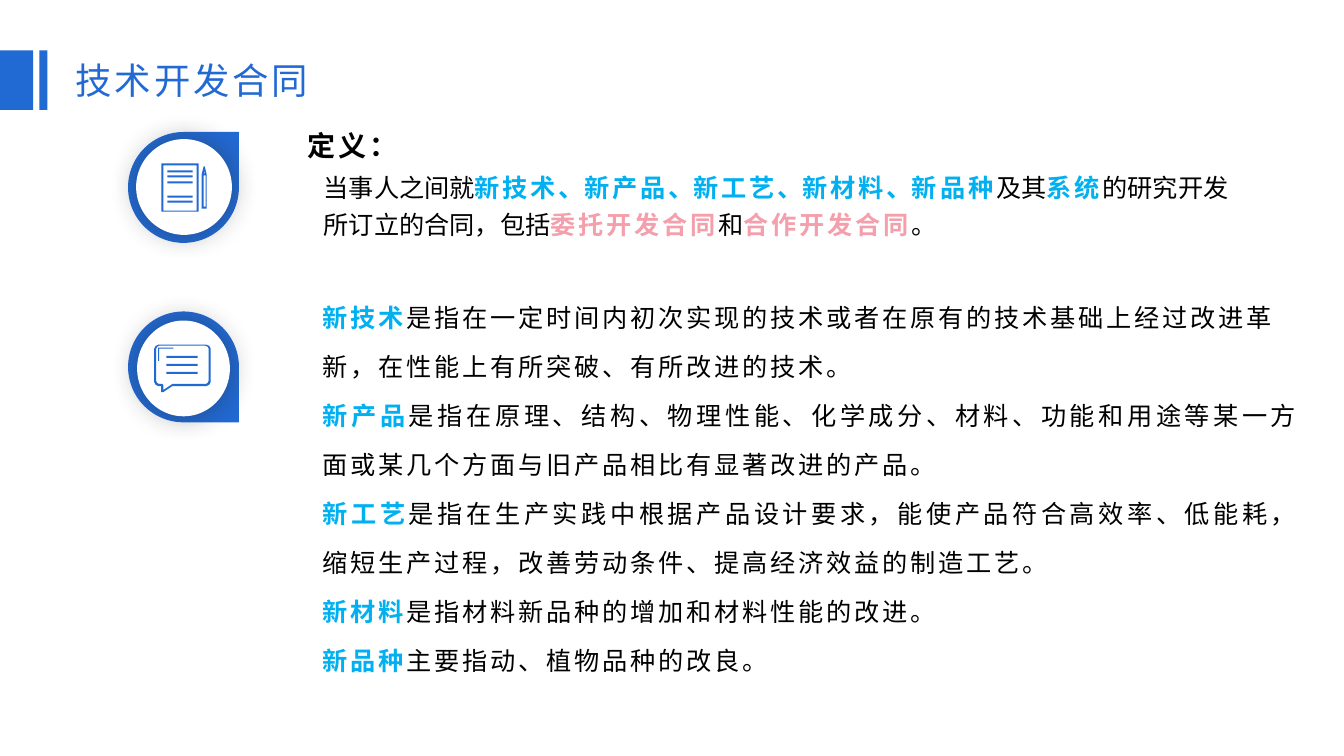
from lxml import etree
from pptx import Presentation
from pptx.dml.color import RGBColor
from pptx.enum.shapes import MSO_SHAPE
from pptx.enum.text import MSO_ANCHOR, PP_ALIGN
from pptx.oxml.ns import qn
from pptx.util import Inches, Pt

RECT, OVAL, TEAR = MSO_SHAPE.RECTANGLE, MSO_SHAPE.OVAL, MSO_SHAPE.TEAR
CENTER, JUSTIFY = PP_ALIGN.CENTER, PP_ALIGN.JUSTIFY
TOP, MIDDLE = MSO_ANCHOR.TOP, MSO_ANCHOR.MIDDLE
BLUE, CYAN, PINK, BLACK, WHITE = "2169D3", "00B0F0", "F49FAC", "000000", "FFFFFF"
SANS, TITLE = "Noto Sans CJK SC", "Noto Sans CJK JP"

TERMS = [
    ("新技术", "是指在一定时间内初次实现的技术或者在原有的技术基础上经过改进革新，在性能上有所突破、有所改进的技术。"),
    ("新产品", "是指在原理、结构、物理性能、化学成分、材料、功能和用途等某一方面或某几个方面与旧产品相比有显著改进的产品。"),
    ("新工艺", "是指在生产实践中根据产品设计要求，能使产品符合高效率、低能耗，缩短生产过程，改善劳动条件、提高经济效益的制造工艺。"),
    ("新材料", "是指材料新品种的增加和材料性能的改进。"),
    ("新品种", "主要指动、植物品种的改良。"),
]


def color(code):
    return RGBColor.from_string(code)


def paint(shape, code):
    shape.shadow.inherit = False
    shape.fill.solid()
    shape.fill.fore_color.rgb = color(code)
    shape.line.fill.background()
    return shape


def add_form(slide, kind, box, code):
    return paint(slide.shapes.add_shape(kind, *map(Inches, box)), code)


def add_glow(shape):
    """Give the shape a soft dark shadow on all sides."""
    effects = shape._element.spPr.find(qn("a:effectLst"))
    glow = etree.SubElement(effects, qn("a:outerShdw"), blurRad=str(Pt(20)),
                            dist="0", dir="0", algn="ctr", rotWithShape="0")
    tint = etree.SubElement(glow, qn("a:srgbClr"), val="262626")
    etree.SubElement(tint, qn("a:alpha"), val="40000")


def add_badge(slide, top, disc, turn):
    """Draw a blue drop with a white disc on it."""
    drop = add_form(slide, TEAR, (1.27, top, 1.1, 1.1), BLUE)
    drop.rotation = turn
    add_glow(add_form(slide, OVAL, disc, WHITE))


def add_icon(slide, loops):
    """Fill closed loops as one outline; a loop inside another is a hole."""
    first, *rest = loops
    pen = slide.shapes.build_freeform(*map(Inches, first[0]), scale=1.0)
    pen.add_line_segments([tuple(map(Inches, spot)) for spot in first[1:]])
    for loop in rest:
        pen.move_to(*map(Inches, loop[0]))
        pen.add_line_segments([tuple(map(Inches, spot)) for spot in loop[1:]])
    paint(pen.convert_to_shape(), BLUE)


def block(left, top, right, low):
    return [(left, top), (right, top), (right, low), (left, low), (left, top)]


def bars(left, right, tops):
    return [block(left, top, right, top + 0.02) for top in tops]


def bubble(left, top, right, low, cut, tail):
    """Speech bubble with cut corners; tail holds its three points."""
    return [(left + cut, top), (right - cut, top), (right - cut / 3, top + cut / 3),
            (right, top + cut), (right, low - cut), (right - cut / 3, low - cut / 3),
            (right - cut, low), *tail, (left + cut, low),
            (left + cut / 3, low - cut / 3), (left, low - cut), (left, top + cut),
            (left + cut / 3, top + cut / 3), (left + cut, top)]


def add_box(slide, box, anchor=TOP):
    frame = slide.shapes.add_textbox(*map(Inches, box)).text_frame
    look = {"word_wrap": True, "vertical_anchor": anchor,
            "margin_left": Inches(0.11), "margin_right": Inches(0.08),
            "margin_top": Inches(0.04), "margin_bottom": Inches(0.04)}
    for key, value in look.items():
        setattr(frame, key, value)
    return frame


def add_run(para, text, size=18, code=BLACK, bold=False, gap=2, face=SANS):
    run = para.add_run()
    run.text = text
    for key, value in {"size": Pt(size), "bold": bold, "name": face}.items():
        setattr(run.font, key, value)
    run.font.color.rgb = color(code)
    props = run._r.get_or_add_rPr()
    props.set("spc", str(gap * 100))
    etree.SubElement(props, qn("a:ea"), typeface=face)


def add_scope(slide):
    para = add_box(slide, (2.6, 1.59, 9.88, 0.96)).paragraphs[0]
    para.line_spacing = 1.25
    para.space_before = Pt(12)
    para._p.get_or_add_pPr().set("marL", str(Inches(0.5)))
    add_run(para, "当事人之间就", gap=0)
    for place, (term, _) in enumerate(TERMS):
        if place:
            add_run(para, "、", code=CYAN, bold=True, gap=0)
        add_run(para, term, code=CYAN, bold=True)
    for plain, term, code in [("及其", "系统", CYAN),
                              ("的研究开发所订立的合同，包括", "委托开发合同", PINK),
                              ("和", "合作开发合同", PINK)]:
        add_run(para, plain, gap=0)
        add_run(para, term, code=code, bold=True)
    add_run(para, "。", gap=0)


def add_terms(slide):
    frame = add_box(slide, (3.09, 2.77, 9.88, 0.96))
    for place, (term, text) in enumerate(TERMS):
        para = frame.add_paragraph() if place else frame.paragraphs[0]
        para.line_spacing = Pt(35)
        if place:
            para.alignment = JUSTIFY
        add_run(para, term, code=CYAN, bold=True)
        add_run(para, text)


def main():
    deck = Presentation()
    deck.slide_width, deck.slide_height = Inches(13.33), Inches(7.5)
    slide = deck.slides.add_slide(deck.slide_layouts[6])

    for left, width in [(0, 0.33), (0.39, 0.08)]:
        add_form(slide, RECT, (left, 0.5, width, 0.59), BLUE)
    title = add_box(slide, (0.54, 0.53, 2.7, 0.52), MIDDLE).paragraphs[0]
    title.alignment = CENTER
    add_run(title, "技术开发合同", size=26, code=BLUE, face=TITLE)

    add_scope(slide)
    head = add_box(slide, (2.94, 1.23, 4.52, 0.41)).paragraphs[0]
    add_run(head, "定义：", size=20, bold=True)
    add_terms(slide)

    add_badge(slide, 1.31, (1.35, 1.38, 0.95, 0.95), 0)
    sheet = [block(1.6, 1.62, 1.97, 2.1), block(1.62, 1.64, 1.95, 2.09)]
    pencil = [[(2, 2.07), (2, 1.73), (2.02, 1.65), (2.03, 1.65),
               (2.05, 1.73), (2.05, 2.07), (2, 2.07)],
              block(2.02, 1.74, 2.04, 2.05),
              [(2.02, 1.72), (2.03, 1.72), (2.03, 1.69), (2.02, 1.72)]]
    add_icon(slide, sheet + pencil + bars(1.66, 1.91, (1.69, 1.74, 1.8, 1.94, 1.99)))

    add_badge(slide, 3.09, (1.36, 3.18, 0.92, 0.95), 90)
    outer = bubble(1.53, 3.42, 2.09, 3.83, 0.04,
                   [(1.71, 3.83), (1.62, 3.89), (1.6, 3.89), (1.6, 3.83)])
    inner = bubble(1.55, 3.43, 2.07, 3.81, 0.03,
                   [(1.71, 3.81), (1.62, 3.87), (1.62, 3.82), (1.61, 3.81)])
    shine = [(1.57, 3.45), (1.72, 3.45), (1.72, 3.46), (1.58, 3.46),
             (1.58, 3.58), (1.57, 3.58), (1.57, 3.45)]
    add_icon(slide, [outer, inner, shine] + bars(1.65, 1.96, (3.53, 3.61, 3.69)))

    deck.save("out.pptx")


if __name__ == "__main__":
    main()
